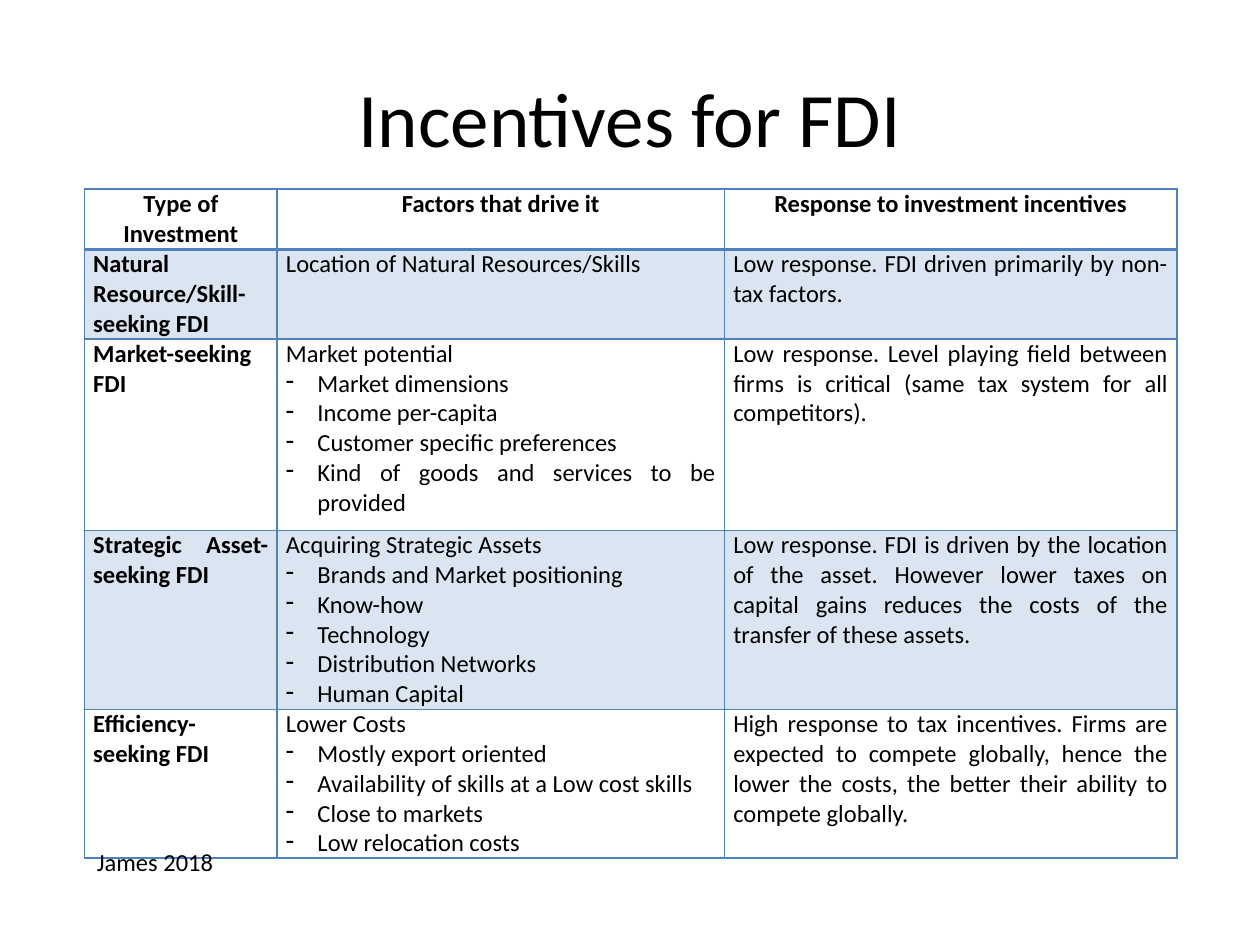
from dataclasses import dataclass

from lxml import etree
from pptx import Presentation
from pptx.dml.color import RGBColor
from pptx.enum.text import MSO_ANCHOR, PP_ALIGN
from pptx.oxml.ns import qn
from pptx.util import Inches, Pt

LEFT, CENTER, JUSTIFY = PP_ALIGN.LEFT, PP_ALIGN.CENTER, PP_ALIGN.JUSTIFY
TOP, MIDDLE = MSO_ANCHOR.TOP, MSO_ANCHOR.MIDDLE


@dataclass(frozen=True)
class Theme:
    font: str = "Calibri"
    text: str = "000000"
    accent: str = "4F81BD"
    band_opacity: int = 20
    title_size: int = 44
    body_size: int = 14
    border: int = 1
    header_border: int = 2


THEME = Theme()
SLIDE_WIDTH, SLIDE_HEIGHT = 10, 7.5
TITLE_BOX = (0.5, 0.3, 9, 1.25)
TABLE_BOX = (0.67, 1.5, 8.67, 5.31)
CREDIT_BOX = (0.67, 6.67, 1.14, 0.34)
COLUMN_WIDTHS = (1.53, 3.55, 3.59)
ROW_HEIGHTS = (0.48, 0.71, 1.52, 1.42, 1.18)
CELL_INSET = 0.07
BULLET_INDENT = 0.25

HEADERS = ("Type of Investment", "Factors that drive it", "Response to investment incentives")
# Each row: investment type, driving factor, its bulleted details, response to incentives.
INVESTMENTS = (
    ("Natural Resource/Skill-seeking FDI", "Location of Natural Resources/Skills", (),
     "Low response. FDI driven primarily by non-tax factors."),
    ("Market-seeking FDI", "Market potential",
     ("Market dimensions", "Income per-capita", "Customer specific preferences",
      "Kind of goods and services to be provided"),
     "Low response. Level playing field between firms is critical "
     "(same tax system for all competitors)."),
    ("Strategic Asset-seeking FDI", "Acquiring Strategic Assets",
     ("Brands and Market positioning", "Know-how", "Technology",
      "Distribution Networks", "Human Capital"),
     "Low response. FDI is driven by the location of the asset. However lower taxes "
     "on capital gains reduces the costs of the transfer of these assets."),
    ("Efficiency-seeking FDI", "Lower Costs",
     ("Mostly export oriented", "Availability of skills at a Low cost skills",
      "Close to markets", "Low relocation costs"),
     "High response to tax incentives. Firms are expected to compete globally, hence "
     "the lower the costs, the better their ability to compete globally."),
)


def add_run(paragraph, text, size, bold=False):
    run = paragraph.add_run()
    run.text = text
    run.font.name = THEME.font
    run.font.size = Pt(size)
    run.font.bold = bold
    run.font.color.rgb = RGBColor.from_string(THEME.text)


def add_text(slide, box, text, size, alignment, anchor, wrap):
    shape = slide.shapes.add_textbox(*map(Inches, box))
    frame = shape.text_frame
    frame.word_wrap = wrap
    frame.vertical_anchor = anchor
    paragraph = frame.paragraphs[0]
    paragraph.alignment = alignment
    add_run(paragraph, text, size)


def add_dash(paragraph):
    """Give the paragraph a dash bullet with a hanging indent."""
    properties = paragraph._p.get_or_add_pPr()
    properties.set("marL", str(Inches(BULLET_INDENT)))
    properties.set("indent", str(-Inches(BULLET_INDENT)))
    etree.SubElement(properties, qn("a:buChar")).set("char", "-")


def set_borders(cell, top, bottom):
    """Draw all four cell sides; top and bottom are widths in points."""
    properties = cell._tc.get_or_add_tcPr()
    sides = {"L": THEME.border, "R": THEME.border, "T": top, "B": bottom}
    for side, width in sides.items():
        line = etree.SubElement(properties, qn(f"a:ln{side}"), w=str(Pt(width)))
        fill = etree.SubElement(line, qn("a:solidFill"))
        etree.SubElement(fill, qn("a:srgbClr"), val=THEME.accent)


def set_fill(cell, banded):
    if not banded:
        cell.fill.background()
        return
    cell.fill.solid()
    cell.fill.fore_color.rgb = RGBColor.from_string(THEME.accent)
    color = cell._tc.tcPr.find(qn("a:solidFill")).find(qn("a:srgbClr"))
    etree.SubElement(color, qn("a:alpha"), val=str(THEME.band_opacity * 1000))


def fill_cell(cell, text, details=(), bold=False, alignment=JUSTIFY):
    cell.margin_left = cell.margin_right = Inches(CELL_INSET)
    cell.margin_top = cell.margin_bottom = 0
    cell.vertical_anchor = TOP
    frame = cell.text_frame
    for index, line in enumerate((text, *details)):
        paragraph = frame.add_paragraph() if index else frame.paragraphs[0]
        if index:
            add_dash(paragraph)
        paragraph.alignment = alignment
        add_run(paragraph, line, THEME.body_size, bold)


def add_incentives_table(slide, box):
    frame = slide.shapes.add_table(len(ROW_HEIGHTS), len(COLUMN_WIDTHS), *map(Inches, box))
    table = frame.table
    table.first_row = table.horz_banding = False
    for column, width in zip(table.columns, COLUMN_WIDTHS):
        column.width = Inches(width)
    for index, (row, height) in enumerate(zip(table.rows, ROW_HEIGHTS)):
        row.height = Inches(height)
        for cell in row.cells:
            set_borders(cell,
                        top=THEME.header_border if index == 1 else THEME.border,
                        bottom=THEME.header_border if index == 0 else THEME.border)
            set_fill(cell, banded=index % 2 == 1)
    for column, header in enumerate(HEADERS):
        fill_cell(table.cell(0, column), header, bold=True, alignment=CENTER)
    for row, (kind, factor, details, response) in enumerate(INVESTMENTS, start=1):
        fill_cell(table.cell(row, 0), kind, bold=True)
        fill_cell(table.cell(row, 1), factor, details)
        fill_cell(table.cell(row, 2), response)


def main():
    presentation = Presentation()
    presentation.slide_width = Inches(SLIDE_WIDTH)
    presentation.slide_height = Inches(SLIDE_HEIGHT)
    slide = presentation.slides.add_slide(presentation.slide_layouts[6])
    add_text(slide, TITLE_BOX, "Incentives for FDI", THEME.title_size, CENTER, MIDDLE, wrap=True)
    add_incentives_table(slide, TABLE_BOX)
    add_text(slide, CREDIT_BOX, "James 2018", THEME.body_size, LEFT, TOP, wrap=False)
    presentation.save("out.pptx")


if __name__ == "__main__":
    main()
